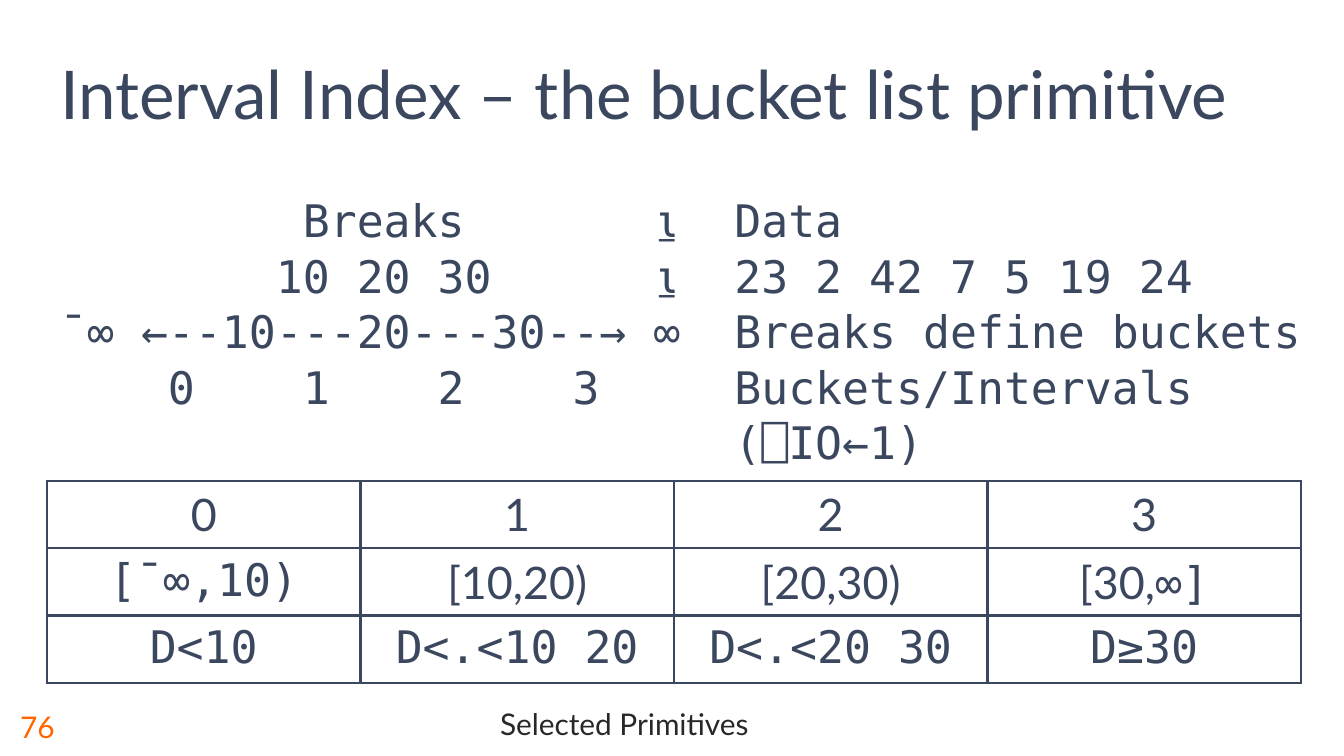
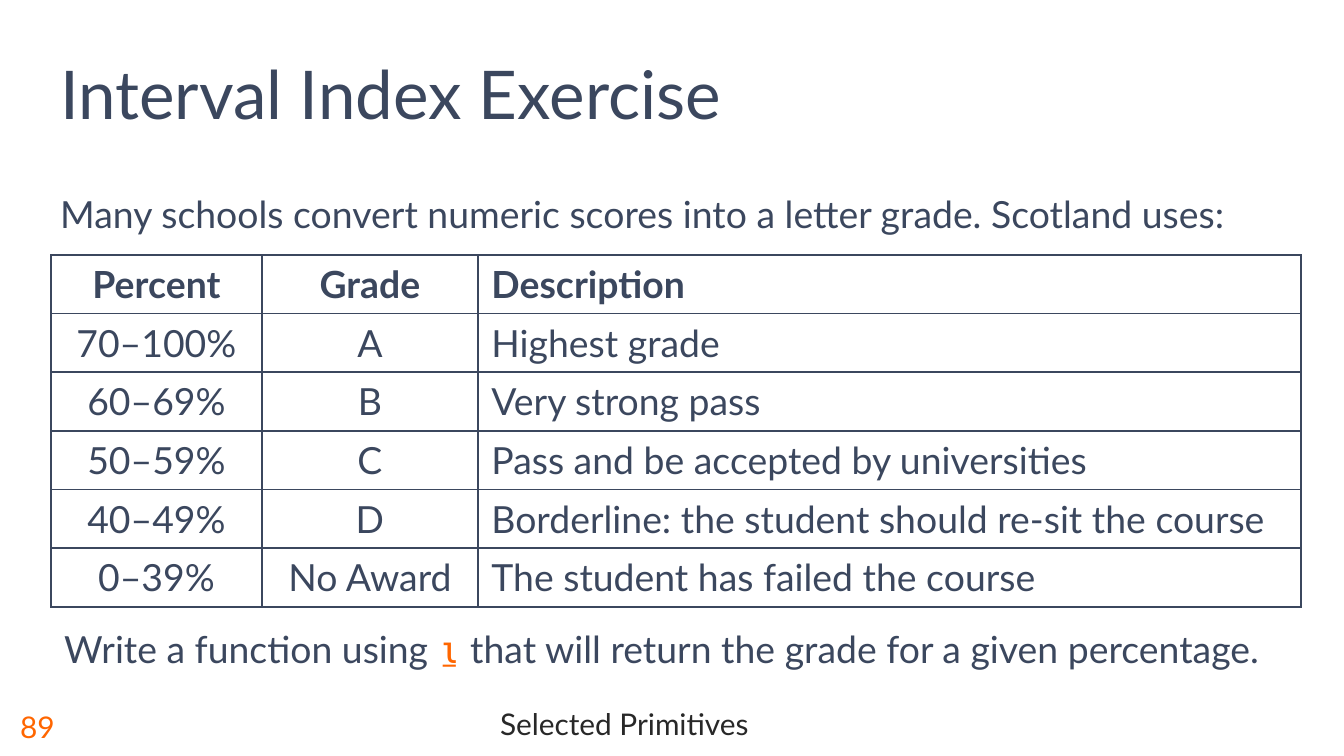
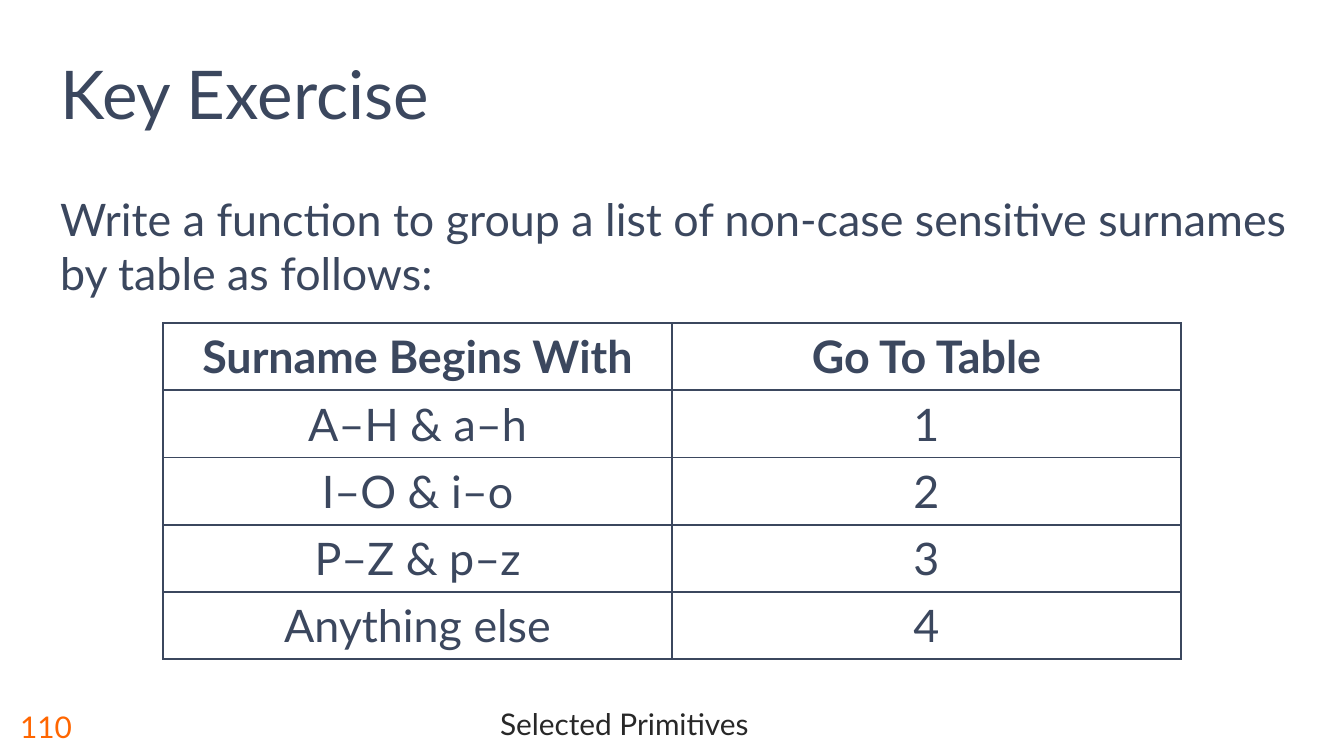
from pptx import Presentation
from pptx.dml.color import RGBColor
from pptx.enum.text import MSO_ANCHOR, PP_ALIGN
from pptx.oxml import parse_xml
from pptx.oxml.ns import nsdecls
from pptx.util import Emu, Pt

PX_PER_INCH = 134.4
COLORS = {"ink": "3B475E", "accent": "FF6600", "footer": "282828"}
SANS = "Lato"
MONO = "DejaVu Sans Mono"
BODY_LEFT, BODY_TOP, BODY_WIDTH, BODY_HEIGHT = 47, 185, 1254, 477


def px(length):
    return Emu(round(length * 914400 / PX_PER_INCH))


def mono(text, **style):
    """Return a run set in the code font."""
    return text, {"font": MONO, **style}


def write(frame, paragraphs, size=24, color="ink", font=SANS, bold=False,
          align=PP_ALIGN.LEFT, spacing=None, after=None):
    """Fill a text frame; a paragraph is a list of strings or (text, overrides) runs."""
    for index, runs in enumerate(paragraphs):
        paragraph = frame.paragraphs[0] if index == 0 else frame.add_paragraph()
        paragraph.alignment = align
        paragraph.line_spacing = spacing
        paragraph.space_after = after
        for piece in runs:
            text, overrides = (piece, {}) if isinstance(piece, str) else piece
            style = {"size": size, "color": color, "font": font, **overrides}
            for number, line in enumerate(text.split("\n")):
                if number:
                    paragraph.add_line_break()
                run = paragraph.add_run()
                run.text = line
                run.font.name = style["font"]
                run.font.size = Pt(style["size"])
                run.font.bold = bold
                run.font.color.rgb = RGBColor.from_string(COLORS[style["color"]])


class Deck:
    """Holds the shared style and the slide being built."""

    def __init__(self):
        self.presentation = Presentation()
        self.presentation.slide_width = px(1344)
        self.presentation.slide_height = px(756)
        self.slide = None

    def new_slide(self, title, number):
        blank = self.presentation.slide_layouts[6]
        self.slide = self.presentation.slides.add_slide(blank)
        self.text([["Selected Primitives"]], 105, 697, 1039, 59, anchor=MSO_ANCHOR.MIDDLE,
                  size=16, color="footer", align=PP_ALIGN.CENTER, spacing=0.8)
        self.text([[str(number)]], 7, 697, 98, 59, anchor=MSO_ANCHOR.MIDDLE,
                  size=16, color="accent")
        self.text([[title]], BODY_LEFT, 39, BODY_WIDTH, 101, anchor=MSO_ANCHOR.BOTTOM, size=36)

    def text(self, paragraphs, left, top, width, height, anchor=MSO_ANCHOR.TOP, **style):
        box = self.slide.shapes.add_textbox(px(left), px(top), px(width), px(height))
        box.text_frame.word_wrap = True
        box.text_frame.vertical_anchor = anchor
        write(box.text_frame, paragraphs, **style)

    def body(self, paragraphs, width=BODY_WIDTH, **style):
        self.text(paragraphs, BODY_LEFT, BODY_TOP, width, BODY_HEIGHT, **style)

    def table(self, rows, left, top, width, height, shares, border=1, header=True,
              left_columns=(), size=24):
        """Draw a ruled table; shares are the relative column widths."""
        grid = self.slide.shapes.add_table(len(rows), len(shares), px(left), px(top),
                                           px(width), px(height)).table
        grid.first_row = header
        grid.horz_banding = False
        for column, share in zip(grid.columns, shares):
            column.width = px(width * share / sum(shares))
        for r, row in enumerate(rows):
            grid.rows[r].height = px(height / len(rows))
            for c, content in enumerate(row):
                cell = grid.cell(r, c)
                runs = content if isinstance(content, list) else [content]
                align = PP_ALIGN.LEFT if c in left_columns else PP_ALIGN.CENTER
                write(cell.text_frame, [runs], size=size, bold=header and r == 0, align=align)
                self.rule(cell, border)
                cell.fill.background()

    def rule(self, cell, points):
        properties = cell._tc.get_or_add_tcPr()
        for side in ("lnL", "lnR", "lnT", "lnB"):
            properties.append(parse_xml(
                f'<a:{side} {nsdecls("a")} w="{Pt(points)}"><a:solidFill>'
                f'<a:srgbClr val="{COLORS["ink"]}"/></a:solidFill></a:{side}>'))


def interval_index(deck):
    deck.new_slide("Interval Index – the bucket list primitive", 76)
    session = [
        "         Breaks       ⍸  Data",
        "        10 20 30      ⍸  23 2 42 7 5 19 24",
        "¯∞ ←--10---20---30--→ ∞  Breaks define buckets",
        "    0    1    2    3     Buckets/Intervals\n"
        "                         (⎕IO←1)",
    ]
    deck.body([[line] for line in session], width=1297, font=MONO, spacing=1.03)
    buckets = [
        ["0", "1", "2", "3"],
        [mono("[¯∞,10)"), "[10,20)", "[20,30)", ["[30,", mono("∞]")]],
        [mono(test) for test in ("D<10", "D<.<10 20", "D<.<20 30", "D≥30")],
    ]
    deck.table(buckets, BODY_LEFT, 481, BODY_WIDTH, 202, shares=[1] * 4,
               border=1.5, header=False)


def interval_exercise(deck):
    deck.new_slide("Interval Index Exercise", 89)
    deck.body([["Many schools convert numeric scores into a letter grade. Scotland uses:"]],
              size=20, after=Pt(12))
    grades = [
        ["Percent", "Grade", "Description"],
        ["70–100%", "A", "Highest grade"],
        ["60–69%", "B", "Very strong pass"],
        ["50–59%", "C", "Pass and be accepted by universities"],
        ["40–49%", "D", "Borderline: the student should re-sit the course"],
        ["0–39%", "No Award", "The student has failed the course"],
    ]
    deck.table(grades, 51, 255, 1250, 352, shares=[211, 216, 823], left_columns=(2,), size=20)
    deck.text([["Write a function using ", mono("⍸", color="accent"),
                " that will return the grade for a given percentage."]],
              51, 620, BODY_WIDTH, 59, size=20)


def key_exercise(deck):
    deck.new_slide("Key Exercise", 110)
    deck.body([["Write a function to group a list of non-case sensitive surnames "
                "by table as follows:"]], after=Pt(12))
    seating = [
        ["Surname Begins With", "Go To Table"],
        ["A–H & a–h", "1"],
        ["I–O & i–o", "2"],
        ["P–Z & p–z", "3"],
        ["Anything else", "4"],
    ]
    deck.table(seating, 163, 323, 1018, 336, shares=[1, 1])


def main():
    deck = Deck()
    interval_index(deck)
    interval_exercise(deck)
    key_exercise(deck)
    deck.presentation.save("out.pptx")


if __name__ == "__main__":
    main()
